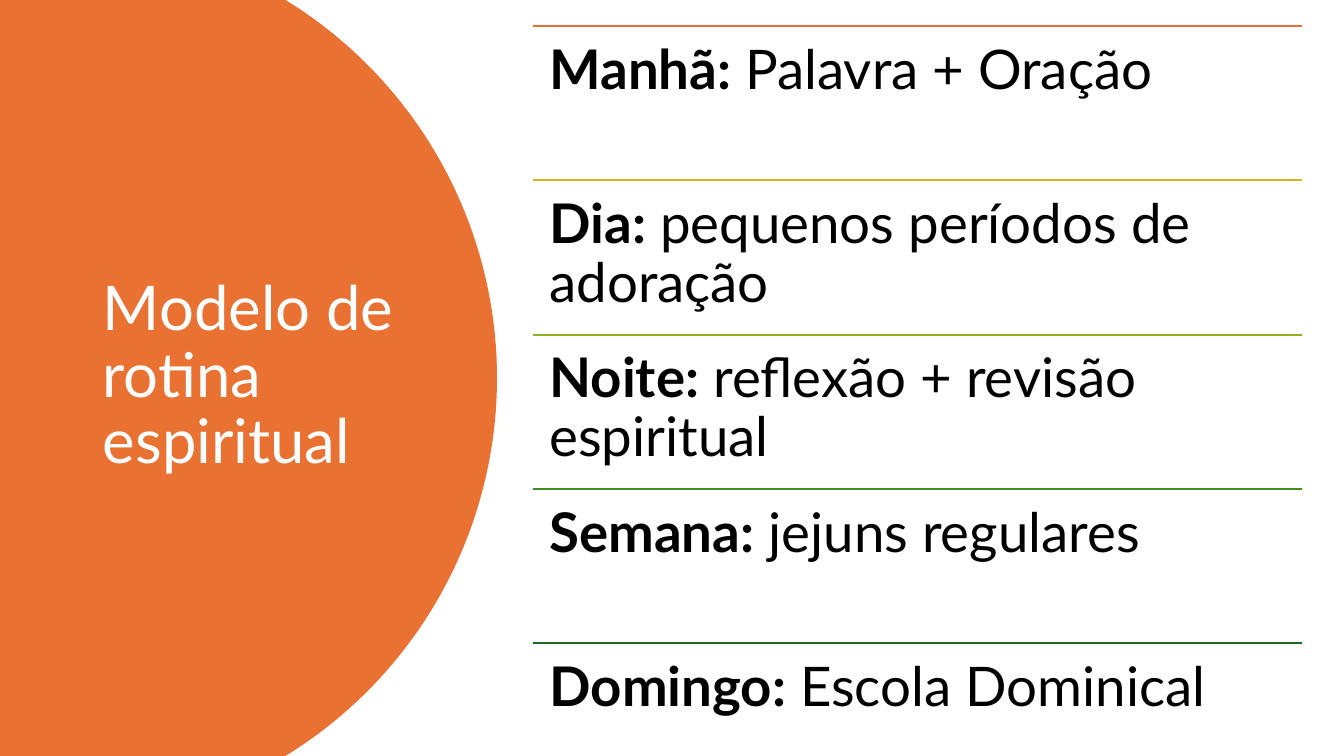
from math import asin, cos, sin

from lxml.etree import SubElement
from pptx import Presentation
from pptx.dml.color import RGBColor
from pptx.enum.shapes import MSO_CONNECTOR as Connector
from pptx.enum.text import MSO_ANCHOR as Anchor, MSO_AUTO_SIZE as AutoSize, PP_ALIGN as Align
from pptx.oxml.ns import qn
from pptx.util import Inches, Pt

WIDTH, HEIGHT = 13.33, 7.5
TITLE = "Modelo de rotina espiritual"
ROUTINE = [
    ("Manhã:", " Palavra + Oração", "E97132"),
    ("Dia:", " pequenos períodos de adoração", "D8B11D"),
    ("Noite:", " reflexão + revisão espiritual", "8EB21E"),
    ("Semana:", " jejuns regulares", "408E1C"),
    ("Domingo:", " Escola Dominical", "196B24"),
]
ROW_LEFT, ROW_TOP, ROW_WIDTH, ROW_HEIGHT = 5.29, 0.26, 7.62, 1.53
ARC_CENTRE, ARC_RADIUS, ARC_STEPS = 0.53, 4.4, 80


def color(value):
    return RGBColor.from_string(value)


def apply(target, values):
    for name, value in values.items():
        setattr(target, name, value)


def add_span(para, text, size, hex_color, bold=False):
    span = para.add_run()
    span.text = text
    apply(span.font, {"name": "Lato", "size": Pt(size), "bold": bold})
    span.font.color.rgb = color(hex_color)


def add_round_panel(page):
    """Fill the left side up to a circular arc, behind everything else."""
    half_angle = asin(HEIGHT / 2 / ARC_RADIUS)
    angles = [half_angle * (2 * step / ARC_STEPS - 1) for step in range(ARC_STEPS + 1)]
    arc = [(Inches(ARC_CENTRE + ARC_RADIUS * cos(angle)),
            Inches(HEIGHT / 2 + ARC_RADIUS * sin(angle))) for angle in angles]
    builder = page.shapes.build_freeform(0, 0)
    builder.add_line_segments(arc + [(0, Inches(HEIGHT))], close=True)
    panel = builder.convert_to_shape()
    panel.shadow.inherit = False
    panel.fill.solid()
    panel.fill.fore_color.rgb = color("E97132")
    panel.line.fill.background()
    page.shapes.title.element.addprevious(panel.element)


def set_title(page):
    title = page.shapes.title
    apply(title, {"left": Inches(0.92), "top": Inches(0.7),
                  "width": Inches(3.23), "height": Inches(6.09)})
    frame = title.text_frame
    apply(frame, {"word_wrap": True, "auto_size": AutoSize.NONE,
                  "vertical_anchor": Anchor.MIDDLE})
    para = frame.paragraphs[0]
    apply(para, {"alignment": Align.LEFT, "line_spacing": 0.9})
    add_span(para, TITLE, 44, "FFFFFF")


def add_rule(page, top, hex_color):
    rule = page.shapes.add_connector(
        Connector.STRAIGHT, Inches(ROW_LEFT), Inches(top),
        Inches(ROW_LEFT + ROW_WIDTH), Inches(top))
    rule.line.color.rgb = color(hex_color)
    rule.line.width = Pt(1.5)
    SubElement(rule.element.spPr, qn("a:effectLst"))


def add_routine_text(page, top, moment, practice):
    box = page.shapes.add_textbox(
        Inches(ROW_LEFT), Inches(top), Inches(ROW_WIDTH), Inches(ROW_HEIGHT))
    frame = box.text_frame
    apply(frame, {"word_wrap": True, "vertical_anchor": Anchor.TOP})
    apply(frame, {f"margin_{side}": Inches(0.16)
                  for side in ("left", "top", "right", "bottom")})
    para = frame.paragraphs[0]
    para.line_spacing = 0.9
    add_span(para, moment, 39, "000000", bold=True)
    add_span(para, practice, 39, "000000")


def main():
    deck = Presentation()
    apply(deck, {"slide_width": Inches(WIDTH), "slide_height": Inches(HEIGHT)})
    page = deck.slides.add_slide(deck.slide_layouts.get_by_name("Title Only"))
    add_round_panel(page)
    set_title(page)
    for index, (moment, practice, hex_color) in enumerate(ROUTINE):
        top = ROW_TOP + index * ROW_HEIGHT
        add_rule(page, top, hex_color)
        add_routine_text(page, top, moment, practice)
    deck.save("out.pptx")


if __name__ == "__main__":
    main()
